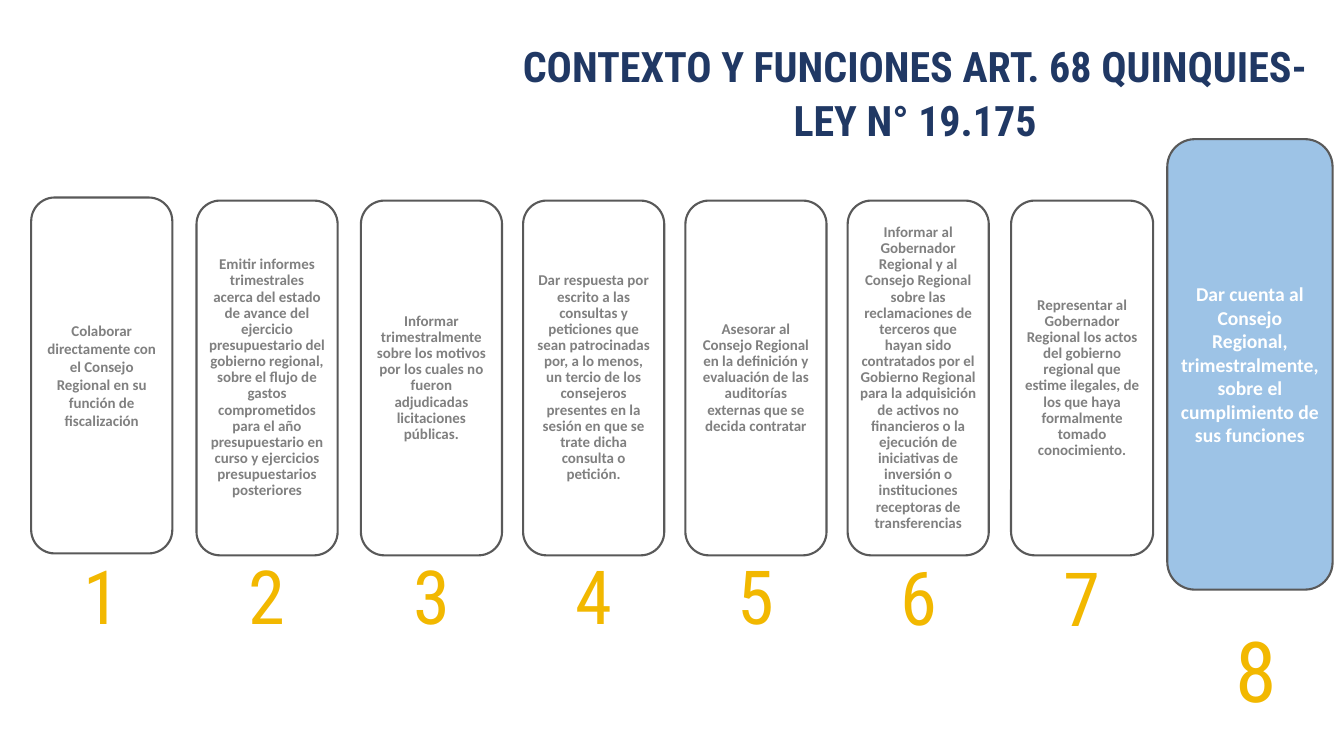
from dataclasses import dataclass
from typing import Any

from pptx import Presentation
from pptx.dml.color import RGBColor
from pptx.enum import shapes, text
from pptx.util import Pt

WHITE = RGBColor(0xFF, 0xFF, 0xFF)
GREY = RGBColor(0x80, 0x80, 0x80)
BORDER = RGBColor(0x59, 0x59, 0x59)
SKY = RGBColor(0x9D, 0xC3, 0xE6)
GOLD = RGBColor(0xF2, 0xB8, 0x00)
NAVY = RGBColor(0x20, 0x38, 0x64)

NUMBER_OFFSET = 30.3  # from the left edge of a card to its number
NUMBER_FONT = "Roboto Condensed"


@dataclass
class Card:
    left: float
    wording: str
    number_width: float = 35.5
    number_top: float = 389.5
    top: float = 143.3
    width: float = 100.8
    height: float = 253.4
    fill: RGBColor = WHITE
    color: RGBColor = GREY
    size: float = 10.7
    spacing: float = 0.9
    number_size: float = 53.3
    number_height: float = 71.3
    number_offset: float = NUMBER_OFFSET
    number_wrap: bool = True


CARDS = [
    Card(22.3, "Colaborar directamente con el Consejo Regional en su función de "
         "fiscalización", number_width=28.1, top=141.1, height=254.2, spacing=1.0),
    Card(140.4, "Emitir informes trimestrales acerca del estado de avance del "
         "ejercicio presupuestario del gobierno regional, sobre el flujo de gastos "
         "comprometidos para el año presupuestario en curso y ejercicios "
         "presupuestarios posteriores"),
    Card(257.8, "Informar trimestralmente sobre los motivos por los cuales no "
         "fueron adjudicadas licitaciones públicas."),
    Card(373.7, "Dar respuesta por escrito a las consultas y peticiones que sean "
         "patrocinadas por, a lo menos, un tercio de los consejeros presentes en la "
         "sesión en que se trate dicha consulta o petición."),
    Card(489.6, "Asesorar al Consejo Regional en la definición y evaluación de las "
         "auditorías externas que se decida contratar"),
    Card(605.5, "Informar al Gobernador Regional y al Consejo Regional sobre las "
         "reclamaciones de terceros que hayan sido contratados por el Gobierno "
         "Regional para la adquisición de activos no financieros o la ejecución de "
         "iniciativas de inversión o instituciones receptoras de transferencias",
         number_top=390.2),
    Card(722.2, "Representar al Gobernador Regional los actos del gobierno regional "
         "que estime ilegales, de los que haya formalmente tomado conocimiento.",
         number_top=391, width=101.5),
    Card(833.8, "Dar cuenta al Consejo Regional, trimestralmente, sobre el "
         "cumplimiento de sus funciones", number_width=39.6, number_top=438.5,
         top=99.4, width=118.1, height=321.8, fill=SKY, color=WHITE, size=14,
         spacing=1.0, number_size=60, number_height=79.9, number_offset=41.8,
         number_wrap=False),
]


def set_all(target: Any, values: dict[str, Any]) -> None:
    for name, value in values.items():
        setattr(target, name, value)


def write(tf: Any, wording: str, font: dict[str, Any], color: RGBColor,
          paragraph: dict[str, Any]) -> None:
    p = tf.paragraphs[0]
    set_all(p, paragraph)
    r = p.add_run()
    r.text = wording
    set_all(r.font, font)
    r.font.color.rgb = color


def add_label(s: Any, box: tuple[float, ...], wording: str, font: dict[str, Any],
              color: RGBColor, paragraph: dict[str, Any], wrap: bool = True) -> None:
    tf = s.shapes.add_textbox(*map(Pt, box)).text_frame
    set_all(tf, {"word_wrap": wrap,
                 "auto_size": text.MSO_AUTO_SIZE.SHAPE_TO_FIT_TEXT})
    write(tf, wording, font, color, paragraph)


def add_card(s: Any, card: Card) -> None:
    box = (card.left, card.top, card.width, card.height)
    sp = s.shapes.add_shape(shapes.MSO_SHAPE.ROUNDED_RECTANGLE, *map(Pt, box))
    sp.shadow.inherit = False
    sp.fill.solid()
    sp.fill.fore_color.rgb = card.fill
    sp.line.color.rgb = BORDER
    sp.line.width = Pt(1.5)
    tf = sp.text_frame
    set_all(tf, {"word_wrap": True, "vertical_anchor": text.MSO_ANCHOR.MIDDLE})
    set_all(tf, {f"margin_{side}": Pt(3.6)
                 for side in ("left", "top", "right", "bottom")})
    write(tf, card.wording,
          {"name": "Calibri", "size": Pt(card.size), "bold": True}, card.color,
          {"alignment": text.PP_ALIGN.CENTER, "line_spacing": card.spacing})


def add_number(s: Any, number: int, card: Card) -> None:
    box = (card.left + card.number_offset, card.number_top,
           card.number_width, card.number_height)
    add_label(s, box, str(number),
              {"name": NUMBER_FONT, "size": Pt(card.number_size)}, GOLD, {},
              card.number_wrap)


def main() -> None:
    prs = Presentation()
    set_all(prs, {"slide_width": Pt(960), "slide_height": Pt(540)})
    s = prs.slides.add_slide(prs.slide_layouts[6])

    # Function cards
    for card in CARDS:
        add_card(s, card)

    # Numbers below the cards
    for number, card in enumerate(CARDS, start=1):
        add_number(s, number, card)

    # Title
    add_label(s, (364.3, 23, 578.9, 43.2),
              "CONTEXTO Y FUNCIONES ART. 68 QUINQUIES-LEY N° 19.175",
              {"name": "Roboto Condensed", "size": Pt(30), "bold": True}, NAVY,
              {"alignment": text.PP_ALIGN.CENTER, "line_spacing": 1.07,
               "space_after": Pt(8)})

    prs.save("out.pptx")


if __name__ == "__main__":
    main()
